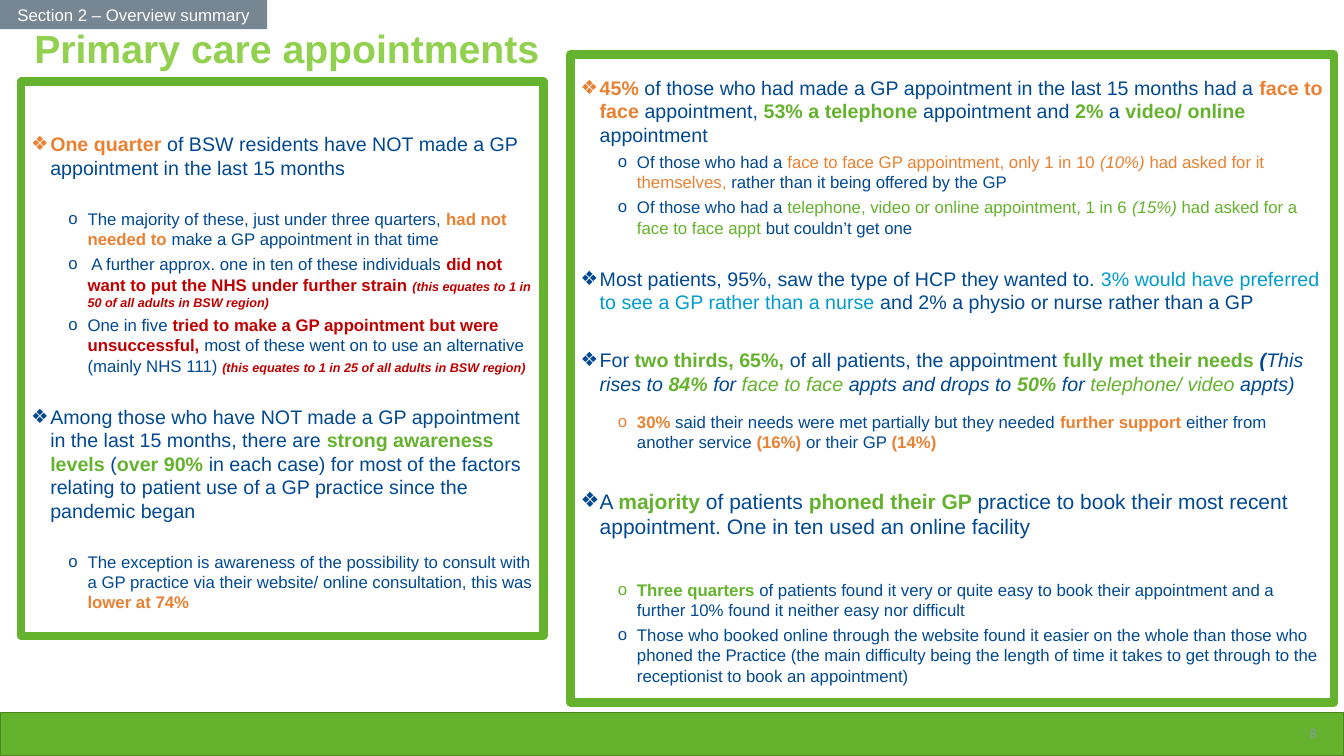
"""Build the primary care appointments summary slide."""
from dataclasses import dataclass
from typing import Any

from lxml import etree
from pptx import Presentation
from pptx import util as u
from pptx.dml.color import RGBColor
from pptx.enum import shapes, text
from pptx.oxml import ns

NAVY = RGBColor(0x00, 0x49, 0x92)
GREEN = RGBColor(0x64, 0xB2, 0x2D)
DARK_GREEN = RGBColor(0x4C, 0x85, 0x23)
LIME = RGBColor(0x92, 0xD0, 0x50)
ORANGE = RGBColor(0xEA, 0x81, 0x32)
RED = RGBColor(0xC0, 0x00, 0x00)
CYAN = RGBColor(0x00, 0x9D, 0xCC)
SLATE = RGBColor(0x76, 0x86, 0x92)
GREY_BLUE = RGBColor(0x8C, 0x95, 0xB6)
WHITE = RGBColor(0xFF, 0xFF, 0xFF)

FONT = "Arial"
BULLETS = ("❖", "o")
MARGINS = (0.19, 0.56)
HANGING = 0.19


@dataclass(frozen=True)
class Run:
    """A stretch of text in one format."""
    text: str
    color: RGBColor = NAVY
    bold: bool = False
    italic: bool = False
    size: float | None = None


@dataclass(frozen=True)
class Bullet:
    """A bulleted paragraph with its space before in points."""
    level: int
    before: float
    size: float
    runs: tuple[Run, ...]


@dataclass(frozen=True)
class Box:
    """A rectangle with its place in inches and its colours."""
    left: float
    top: float
    width: float
    height: float
    fill: RGBColor | None = None
    line: RGBColor | None = None
    weight: float = 1


def point(before: float, *runs: Run, size: float = 14) -> Bullet:
    """Make a main bullet."""
    return Bullet(0, before, size, runs)


def detail(before: float, *runs: Run) -> Bullet:
    """Make a second-level bullet."""
    return Bullet(1, before, 12, runs)


def strong(words: str, color: RGBColor = GREEN, italic: bool = False, size: float | None = None) -> Run:
    """Make a bold highlighted run."""
    return Run(words, color, True, italic, size)


FOOTER = Box(0, 7.07, 13.33, 0.43, GREEN, DARK_GREEN)
SECTION_TAG = Box(0, 0, 2.65, 0.29, SLATE)
NON_USERS_BOX = Box(0.21, 0.81, 5.18, 5.5, None, GREEN, 6)
PATIENTS_BOX = Box(5.66, 0.54, 7.57, 6.43, WHITE, GREEN, 6)

NON_USERS = (
    point(0, strong("One quarter ", ORANGE),
          Run("of BSW residents have NOT made a GP appointment in the last 15 months")),
    detail(21, Run("The majority of these, just under three quarters, "),
           strong("had not needed to ", ORANGE), Run("make a GP appointment in that time")),
    detail(3.8, Run(" A further approx. one in ten of these individuals "),
           strong("did not want to put the NHS under further strain ", RED),
           strong("(this equates to 1 in 50 of all adults in BSW region)", RED, True, 9)),
    detail(3.8, Run("One in five "),
           strong("tried to make a GP appointment but were unsuccessful, ", RED),
           Run("most of these went on to use an alternative (mainly NHS 111) "),
           strong("(this equates to 1 in 25 of all adults in BSW region)", RED, True, 9)),
    point(21, Run("Among those who have NOT made a GP appointment in the last 15 months, there are "),
          strong("strong awareness levels "), Run("("), strong("over 90% "),
          Run("in each case) for most of the factors relating to patient use of a GP practice "
              "since the pandemic began")),
    detail(21, Run("The exception is awareness of the possibility to consult with a GP practice "
                   "via their website/ online consultation, this was "),
           strong("lower at 74%", ORANGE)),
)

PATIENTS = (
    point(0, strong("45%", ORANGE),
          Run(" of those who had made a GP appointment in the last 15 months had a "),
          strong("face to face ", ORANGE), Run("appointment, "), strong("53% a telephone "),
          Run("appointment and "), strong("2%"), Run(" a "), strong("video/ online"),
          Run(" appointment")),
    detail(3.8, Run("Of those who had a "),
           Run("face to face GP appointment, only 1 in 10 ", ORANGE),
           Run("(10%) ", ORANGE, italic=True), Run("had asked for it themselves, ", ORANGE),
           Run("rather than it being offered by the GP")),
    detail(3.8, Run("Of those who had a "),
           Run("telephone, video or online appointment, 1 in 6 ", GREEN),
           Run("(15%) ", GREEN, italic=True), Run("had asked for a face to face appt ", GREEN),
           Run("but couldn’t get one")),
    point(21, Run("Most patients, 95%, saw the type of HCP they wanted to. "),
          Run("3% would have preferred to see a GP rather than a nurse ", CYAN),
          Run("and 2% a physio or nurse rather than a GP")),
    point(24.6, Run("For "), strong("two thirds, 65%, "), Run("of all patients, the appointment "),
          strong("fully met their needs "), strong("(", NAVY, True),
          Run("This rises to ", italic=True), strong("84%", italic=True),
          Run(" for ", italic=True), Run("face to face ", GREEN, italic=True),
          Run("appts and drops to ", italic=True), strong("50%", italic=True),
          Run(" for ", italic=True), Run("telephone/ video ", GREEN, italic=True),
          Run("appts)", italic=True)),
    detail(11.8, strong("30%", ORANGE), Run(" said their needs were met partially but they needed "),
           strong("further support ", ORANGE), Run("either from another service "),
           strong("(16%)", ORANGE), Run(" or their GP "), strong("(14%)", ORANGE)),
    point(25.6, Run("A "), strong("majority "), Run("of patients "), strong("phoned their GP "),
          Run("practice to book their most recent appointment. One in ten used an online facility"),
          size=15),
    detail(29.2, strong("Three quarters "),
           Run("of patients found it very or quite easy to book their appointment and a further "
               "10% found it neither easy nor difficult")),
    detail(3.8, Run("Those who booked online through the website found it easier on the whole than "
                    "those who phoned the Practice (the main difficulty being the length of time it "
                    "takes to get through to the receptionist to book an appointment)")),
)


def apply(obj: Any, fmt: dict[str, Any]) -> None:
    """Set each named attribute on an object."""
    for name, value in fmt.items():
        setattr(obj, name, value)


def set_frame(tf: Any, anchor: Any, left: float = 0.1, top: float = 0.05) -> None:
    """Format a text frame with side and top insets in inches."""
    apply(tf, {"word_wrap": True, "auto_size": text.MSO_AUTO_SIZE.NONE, "vertical_anchor": anchor,
               "margin_left": u.Inches(left), "margin_right": u.Inches(left),
               "margin_top": u.Inches(top), "margin_bottom": u.Inches(0.05)})


def add_run(p: Any, run: Run, size: float) -> None:
    """Append a formatted run to a paragraph."""
    r = p.add_run()
    r.text = run.text
    apply(r.font, {"name": FONT, "size": u.Pt(run.size or size), "bold": run.bold,
                   "italic": run.italic})
    r.font.color.rgb = run.color


def add_box(s: Any, box: Box) -> Any:
    """Draw a rectangle."""
    sp = s.shapes.add_shape(shapes.MSO_SHAPE.RECTANGLE, *map(
        u.Inches, (box.left, box.top, box.width, box.height)))
    sp.shadow.inherit = False
    for paint, color in ((sp.fill, box.fill), (sp.line.fill, box.line)):
        if color is None:
            paint.background()
        else:
            paint.solid()
            paint.fore_color.rgb = color
    if box.line is not None:
        sp.line.width = u.Pt(box.weight)
    return sp


def add_bullets(sp: Any, bullets: tuple[Bullet, ...], top: float) -> None:
    """Fill a shape with bulleted paragraphs."""
    tf = sp.text_frame
    set_frame(tf, text.MSO_ANCHOR.TOP, top=top)
    for i, bullet in enumerate(bullets):
        p = tf.add_paragraph() if i else tf.paragraphs[0]
        pPr = p._p.get_or_add_pPr()
        pPr.set("marL", str(u.Inches(MARGINS[bullet.level])))
        pPr.set("indent", str(u.Inches(-HANGING)))
        etree.SubElement(pPr, ns.qn("a:buFont")).set("typeface", FONT)
        etree.SubElement(pPr, ns.qn("a:buChar")).set("char", BULLETS[bullet.level])
        apply(p, {"level": bullet.level, "alignment": text.PP_ALIGN.LEFT,
                  "line_spacing": 1.0, "space_before": u.Pt(bullet.before)})
        for run in bullet.runs:
            add_run(p, run, bullet.size)


def add_label(sp: Any, run: Run, size: float, align: Any, anchor: Any = text.MSO_ANCHOR.MIDDLE,
              left: float = 0.1, top: float = 0.05, spacing: float = 1.0) -> None:
    """Write a single line in a shape."""
    set_frame(sp.text_frame, anchor, left, top)
    p = sp.text_frame.paragraphs[0]
    apply(p, {"alignment": align, "space_before": u.Pt(0), "line_spacing": spacing})
    add_run(p, run, size)


def main() -> None:
    """Build and save the slide."""
    prs = Presentation()
    apply(prs, {"slide_width": u.Inches(13.33), "slide_height": u.Inches(7.5)})
    s = prs.slides.add_slide(prs.slide_layouts[5])
    title = s.shapes.title
    apply(title, {"left": u.Inches(0.1), "top": u.Inches(0.29),
                  "width": u.Inches(10.62), "height": u.Inches(0.52)})
    add_label(title, strong("Primary care appointments", LIME), 28, text.PP_ALIGN.LEFT,
              text.MSO_ANCHOR.TOP, 0.24, 0, 0.9)
    add_box(s, FOOTER)
    number = s.shapes.add_textbox(*map(u.Inches, (10.16, 7.08, 3, 0.4)))
    add_label(number, Run("8", GREY_BLUE), 9, text.PP_ALIGN.RIGHT)
    add_label(add_box(s, SECTION_TAG), Run("Section 2 – Overview summary", WHITE), 12,
              text.PP_ALIGN.CENTER)
    add_bullets(add_box(s, NON_USERS_BOX), NON_USERS, 0.5)
    add_bullets(add_box(s, PATIENTS_BOX), PATIENTS, 0.21)
    prs.save("out.pptx")


if __name__ == "__main__":
    main()
